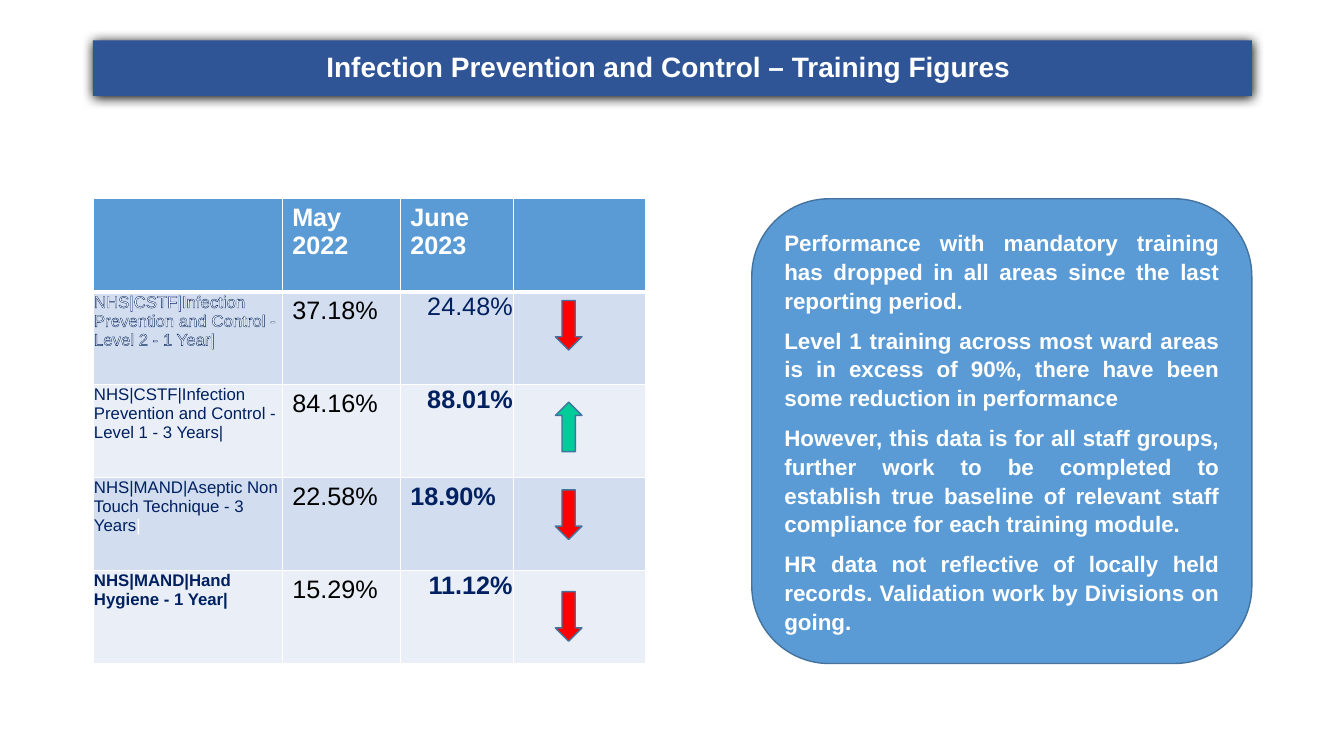
from lxml import etree
from pptx import Presentation
from pptx.dml.color import RGBColor
from pptx.enum import shapes, text
from pptx.oxml.ns import qn
from pptx.util import Pt

THEME = {
    "font": "Arial", "title_size": 20, "figure_size": 18, "panel_size": 16, "label_size": 12,
    "white": "FFFFFF", "black": "000000", "navy": "002060",
    "banner": "2F5597", "blue": "5B9BD5", "edge": "43739E",
    "bands": ("D2DEEF", "EAEFF7"), "fall": "FF0000", "rise": "00CC99",
}

TITLE = "Infection Prevention and Control – Training Figures "
HEADERS = ["", "May 2022", "June 2023", ""]
NAVY, NAVY_BOLD = {"color": "navy"}, {"color": "navy", "bold": True}
# label runs, May figure, June figure, June format, June set tight to the right, trend, arrow top
COURSES = [
    ([("NHS|CSTF|Infection Prevention and Control - Level 2 - 1 Year|",
       {"color": "white", "outline": "navy"})],
     "37.18%", "24.48%", NAVY, True, "fall", 214.6),
    ([("NHS|CSTF|Infection Prevention and Control - Level 1 - 3 Years|", NAVY)],
     "84.16%", "88.01%", NAVY_BOLD, True, "rise", 287.2),
    ([("NHS|MAND|Aseptic Non Touch Technique - 3 Years", NAVY), ("|", {"color": "white"})],
     "22.58%", "18.90%", NAVY_BOLD, False, "fall", 349.9),
    ([("NHS|MAND|Hand Hygiene - 1 Year|", NAVY_BOLD)],
     "15.29%", "11.12%", NAVY_BOLD, True, "fall", 422.6),
]
COMMENTS = [
    "Performance with mandatory training has dropped in all areas since the last reporting period.  ",
    "Level 1 training across most ward areas is in excess of 90%, there have been some reduction "
    "in performance",
    "However, this data is for all staff groups, further work to be completed to establish true "
    "baseline of relevant staff compliance for each training module.",
    "HR data not reflective of locally held records. Validation work by Divisions on going. ",
]

LEFT, RIGHT, TOP = 66.4, 894.2, 142
COLUMNS, ROW_HEIGHT = [135.2, 84.4, 81, 94], 66.4
BODY_HEIGHT = ROW_HEIGHT * (len(COURSES) + 1)
PANEL_LEFT = 537
ARROW_LEFT, ARROW_WIDTH, ARROW_HEIGHT = 396.7, 19, 35.4
TIGHT = {"margin_left": Pt(0.75), "margin_right": Pt(0.75), "margin_top": Pt(0.75)}


def rgb(name):
    return RGBColor.from_string(THEME.get(name, name))


def set_all(target, values):
    for name, value in values.items():
        setattr(target, name, value)


def add_solid(parent, name):
    fill = etree.SubElement(parent, qn("a:solidFill"))
    return etree.SubElement(fill, qn("a:srgbClr"), val=THEME[name])


def add_run(paragraph, words, size, color="white", bold=False, outline=None):
    run = paragraph.add_run()
    run.text = words
    set_all(run.font, {"name": THEME["font"], "size": Pt(THEME[size]), "bold": bold})
    run.font.color.rgb = rgb(color)
    if outline:
        line = etree.Element(qn("a:ln"), w=str(Pt(0.75)))
        add_solid(line, outline)
        run.font.fill._xPr.insert(0, line)


def add_block(slide, kind, box, fill, edge=None):
    shape = slide.shapes.add_shape(kind, *map(Pt, box))
    shape.shadow.inherit = False
    shape.fill.solid()
    shape.fill.fore_color.rgb = rgb(fill)
    if edge:
        shape.line.color.rgb = rgb(edge)
        shape.line.width = Pt(1)
    else:
        shape.line.fill.background()
    set_all(shape.text_frame, {"word_wrap": True, "vertical_anchor": text.MSO_ANCHOR.MIDDLE})
    return shape


def add_banner(slide):
    banner = add_block(slide, shapes.MSO_SHAPE.ROUNDED_RECTANGLE,
                       (LEFT, 28.8, RIGHT - LEFT, 39.6), "banner")
    banner.adjustments[0] = 0
    effects = banner._element.spPr.find(qn("a:effectLst"))
    shadow = etree.SubElement(effects, qn("a:outerShdw"), blurRad=str(Pt(8.5)),
                              dist=str(Pt(1)), dir="5400000", algn="t", rotWithShape="0")
    etree.SubElement(shadow, qn("a:srgbClr"), val=THEME["black"])
    paragraph = banner.text_frame.paragraphs[0]
    set_all(paragraph, {"alignment": text.PP_ALIGN.CENTER, "line_spacing": 0.9})
    add_run(paragraph, TITLE, "title_size", bold=True)


def style_cell(cell, fill, top=1, bottom=1):
    """Fill a cell and give it white borders."""
    cell.fill.solid()
    cell.fill.fore_color.rgb = rgb(fill)
    properties = cell._tc.get_or_add_tcPr()
    for place, (side, width) in enumerate({"L": 1, "R": 1, "T": top, "B": bottom}.items()):
        border = etree.Element(qn("a:ln" + side), w=str(Pt(width)))
        add_solid(border, "white")
        properties.insert(place, border)


def add_training_table(slide):
    table = slide.shapes.add_table(len(COURSES) + 1, len(COLUMNS), Pt(LEFT), Pt(TOP),
                                   Pt(sum(COLUMNS)), Pt(BODY_HEIGHT)).table
    for column, width in zip(table.columns, COLUMNS):
        column.width = Pt(width)
    for row in table.rows:
        row.height = Pt(ROW_HEIGHT)
    for cell, header in zip(table.rows[0].cells, HEADERS):
        style_cell(cell, "blue", bottom=3)
        if header:
            add_run(cell.text_frame.paragraphs[0], header, "figure_size", bold=True)
    for number, (label, may, june, june_format, tight, _, _) in enumerate(COURSES, 1):
        cells = list(table.rows[number].cells)
        for cell in cells:
            style_cell(cell, THEME["bands"][(number - 1) % 2], top=3 if number == 1 else 1)
        label_line, may_line, june_line = [c.text_frame.paragraphs[0] for c in cells[:3]]
        set_all(cells[0], TIGHT)
        for words, run_format in label:
            add_run(label_line, words, "label_size", **run_format)
        add_run(may_line, may, "figure_size", "black")
        if tight:
            set_all(cells[2], TIGHT)
            june_line.alignment = text.PP_ALIGN.RIGHT
        add_run(june_line, june, "figure_size", **june_format)


def add_trend_arrows(slide):
    for *_, trend, top in COURSES:
        arrow = add_block(slide, shapes.MSO_SHAPE.DOWN_ARROW,
                          (ARROW_LEFT, top, ARROW_WIDTH, ARROW_HEIGHT), trend, "edge")
        arrow.rotation = 180 if trend == "rise" else 0


def add_comment_panel(slide):
    panel = add_block(slide, shapes.MSO_SHAPE.ROUNDED_RECTANGLE,
                      (PANEL_LEFT, TOP, RIGHT - PANEL_LEFT, BODY_HEIGHT), "blue", "edge")
    frame = panel.text_frame
    for number, comment in enumerate(COMMENTS):
        paragraph = frame.add_paragraph() if number else frame.paragraphs[0]
        set_all(paragraph, {"alignment": text.PP_ALIGN.JUSTIFY, "line_spacing": 1.07,
                            "space_after": Pt(8)})
        add_run(paragraph, comment, "panel_size", bold=True)


def main():
    presentation = Presentation()
    set_all(presentation, {"slide_width": Pt(960), "slide_height": Pt(540)})
    slide = presentation.slides.add_slide(presentation.slide_layouts[6])
    add_training_table(slide)
    add_banner(slide)
    add_trend_arrows(slide)
    add_comment_panel(slide)
    presentation.save("out.pptx")


if __name__ == "__main__":
    main()
